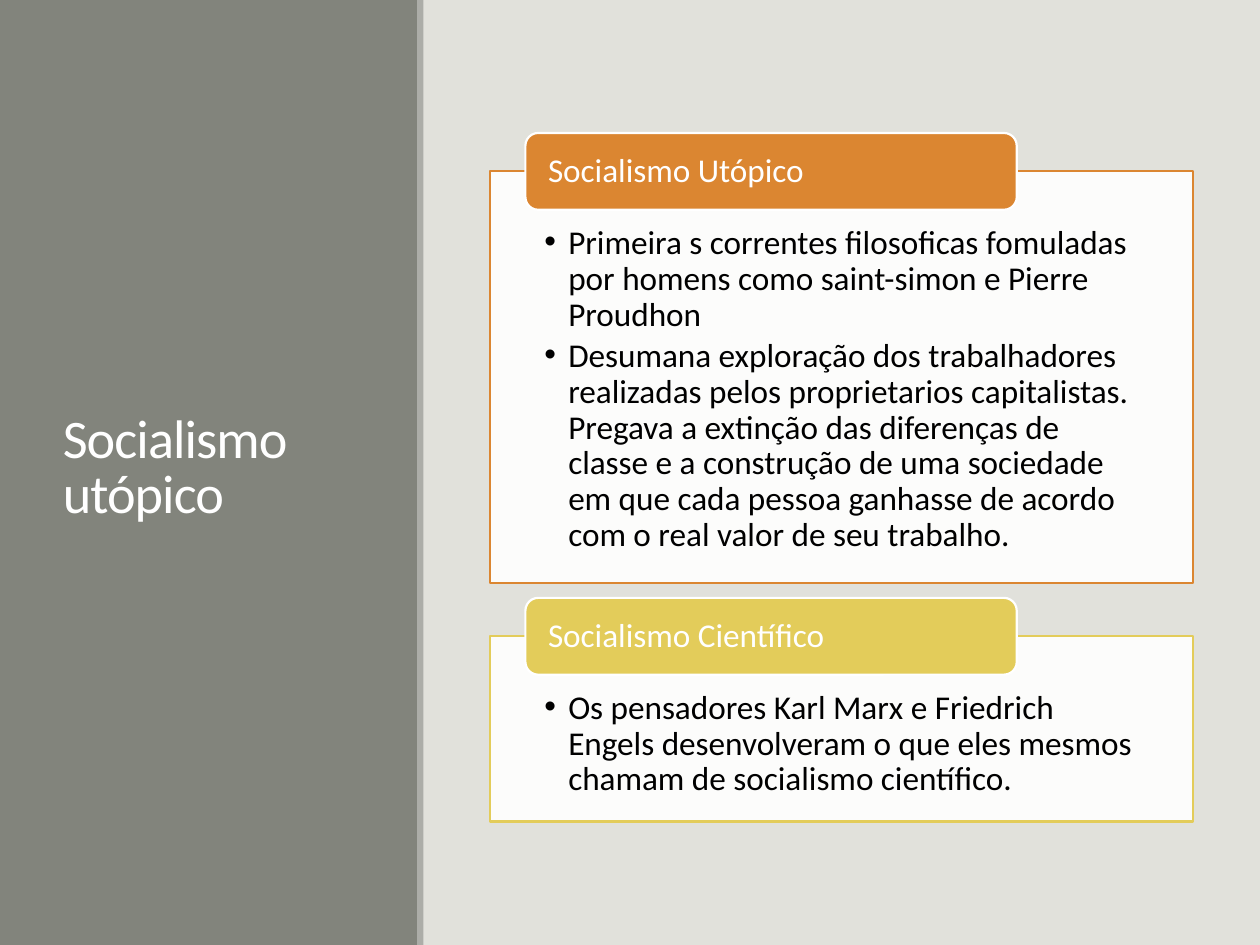
from pptx import Presentation
from pptx import util as u
from pptx.dml.color import RGBColor
from pptx.enum import shapes, text
from pptx.oxml.ns import qn
from lxml import etree

FONT = "Calibri"
COLORS = {
    "background": "E1E1DB",
    "panel": "82847C",
    "divider": "ACADA8",
    "white": "FFFFFF",
    "black": "000000",
    "orange": "DB8631",
    "yellow": "E3CC5A",
}
CARD_LEFT, CARD_WIDTH = 3.89, 5.58
TAB_LEFT, TAB_WIDTH, TAB_HEIGHT = 4.17, 3.9, 0.61
CARDS = [
    ("Socialismo Utópico", "orange", 1.36, 3.27, [
        "Primeira s correntes filosoficas fomuladas por homens como saint-simon e Pierre Proudhon",
        "Desumana exploração dos trabalhadores realizadas pelos proprietarios capitalistas. "
        "Pregava a extinção das diferenças de classe e a construção de uma sociedade em que "
        "cada pessoa ganhasse de acordo com o real valor de seu trabalho.",
    ]),
    ("Socialismo Científico", "yellow", 5.05, 1.47, [
        "Os pensadores Karl Marx e Friedrich Engels desenvolveram o que eles mesmos "
        "chamam de socialismo científico.",
    ]),
]


def rgb(name):
    return RGBColor.from_string(COLORS[name])


def set_all(obj, values):
    for name, value in values.items():
        setattr(obj, name, value)


def add_box(s, kind, at, fill, line=None):
    sp = s.shapes.add_shape(kind, *map(u.Inches, at))
    sp.shadow.inherit = False
    sp.fill.solid()
    sp.fill.fore_color.rgb = rgb(fill)
    if line:
        sp.line.color.rgb = rgb(line)
        sp.line.width = u.Pt(1.25)
    else:
        sp.line.fill.background()
    return sp


def set_alpha(sp, percent):
    color = sp.fill._xPr.find(qn("a:solidFill"))[0]
    etree.SubElement(color, qn("a:alpha"), val=str(percent * 1000))


def set_frame(sp, anchor, margins):
    tf = sp.text_frame
    names = ("margin_left", "margin_top", "margin_right", "margin_bottom")
    set_all(tf, {"word_wrap": True, "vertical_anchor": anchor,
                 **dict(zip(names, map(u.Inches, margins)))})
    return tf


def write(p, words, size, color, spacing=0.9, after=0):
    set_all(p, {"alignment": text.PP_ALIGN.LEFT, "line_spacing": spacing,
                "space_after": u.Pt(after)})
    r = p.add_run()
    r.text = words
    set_all(r.font, {"name": FONT, "size": u.Pt(size)})
    r.font.color.rgb = rgb(color)
    return r


def add_bullet(p):
    pPr = p._p.get_or_add_pPr()
    indent = u.Inches(0.19)
    pPr.set("marL", str(indent))
    pPr.set("indent", str(-indent))
    etree.SubElement(pPr, qn("a:buFont"), typeface="Arial")
    etree.SubElement(pPr, qn("a:buChar"), char="•")


def add_title(s, words):
    sp = s.shapes.add_textbox(*map(u.Inches, (0.4, 0.57, 2.53, 6.31)))
    tf = set_frame(sp, text.MSO_ANCHOR.MIDDLE, (0.1, 0.05, 0.1, 0.05))
    r = write(tf.paragraphs[0], words, 31, "white", spacing=0.85)
    r._r.get_or_add_rPr().set("spc", "-50")


def add_card(s, heading, color, top, height, items):
    sp = add_box(s, shapes.MSO_SHAPE.RECTANGLE,
                 (CARD_LEFT, top, CARD_WIDTH, height), "white", color)
    set_alpha(sp, 90)
    tf = set_frame(sp, text.MSO_ANCHOR.TOP, (0.43, 0.43, 0.43, 0.15))
    for i, item in enumerate(items):
        p = tf.add_paragraph() if i else tf.paragraphs[0]
        p.level = 1
        write(p, item, 19, "black", after=3)
        add_bullet(p)

    tab = add_box(s, shapes.MSO_SHAPE.ROUNDED_RECTANGLE,
                  (TAB_LEFT, top - TAB_HEIGHT / 2, TAB_WIDTH, TAB_HEIGHT), color, "white")
    tf = set_frame(tab, text.MSO_ANCHOR.MIDDLE, (0.15, 0, 0.15, 0))
    write(tf.paragraphs[0], heading, 19, "white")


def main():
    prs = Presentation()
    set_all(prs, {"slide_width": u.Inches(10), "slide_height": u.Inches(7.5)})
    s = prs.slides.add_slide(prs.slide_layouts[6])
    s.background.fill.solid()
    s.background.fill.fore_color.rgb = rgb("background")
    add_box(s, shapes.MSO_SHAPE.RECTANGLE, (0, 0, 3.32, 7.5), "panel")
    add_title(s, "Socialismo utópico")
    add_box(s, shapes.MSO_SHAPE.RECTANGLE, (3.31, 0, 0.05, 7.5), "divider")
    for card in CARDS:
        add_card(s, *card)
    prs.save("out.pptx")


if __name__ == "__main__":
    main()
